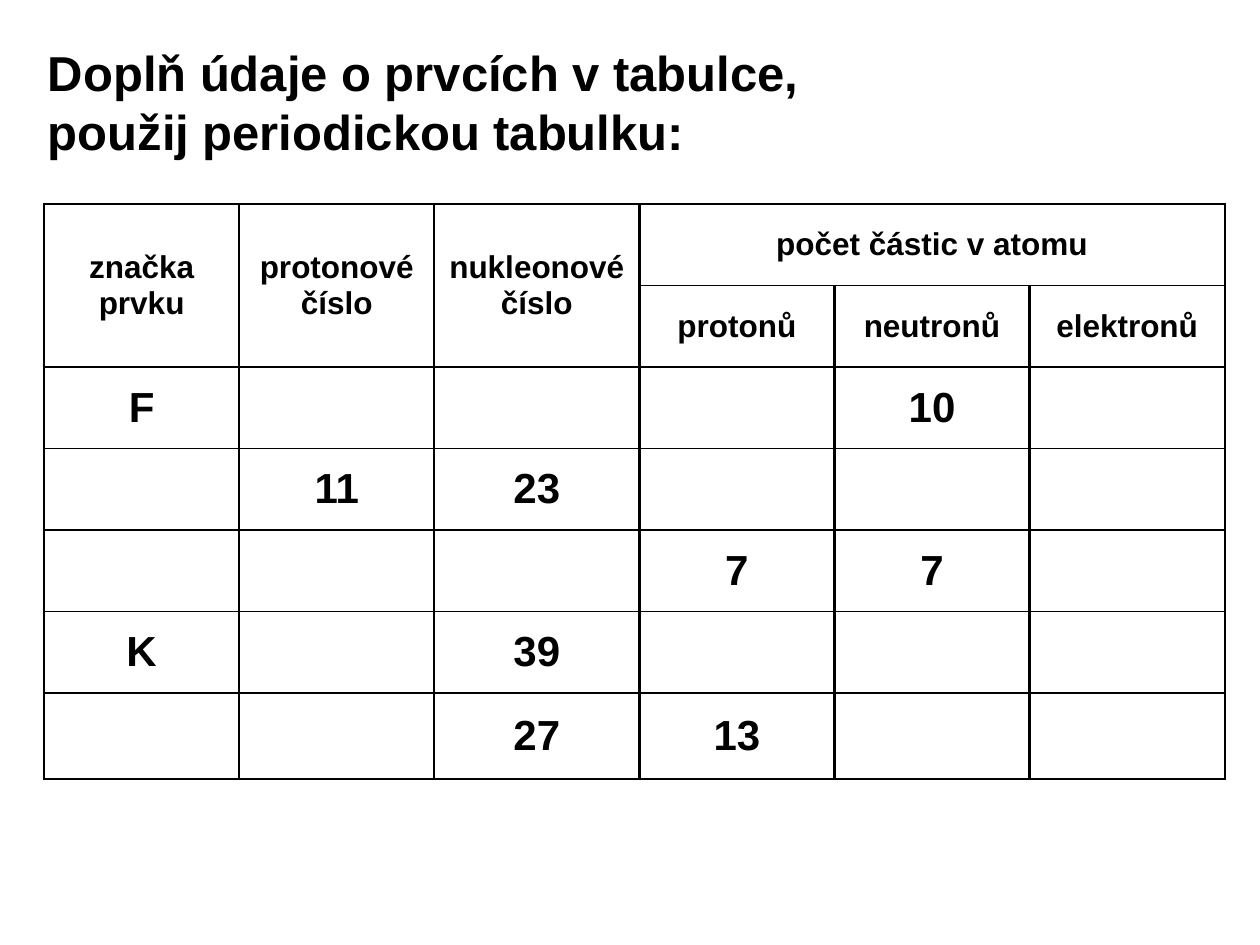
from lxml.etree import SubElement
from pptx import Presentation
from pptx.dml.color import RGBColor
from pptx.enum.text import MSO_ANCHOR as Anchor, MSO_AUTO_SIZE as AutoSize, PP_ALIGN as Align
from pptx.oxml.ns import qn
from pptx.util import Pt

# Content
HEADING = "Doplň údaje o prvcích v tabulce, použij periodickou tabulku:"
HEADER_ROWS = [
    ["značka\nprvku", "protonové číslo", "nukleonové číslo", "počet částic v atomu", "", ""],
    ["", "", "", "protonů", "neutronů", "elektronů"],
]
ELEMENT_ROWS = [
    ["F", "", "", "", "10", ""],
    ["", "11", "23", "", "", ""],
    ["", "", "", "7", "7", ""],
    ["K", "", "39", "", "", ""],
    ["", "", "27", "13", "", ""],
]
MERGES = [((0, col), (1, col)) for col in range(3)] + [((0, 3), (0, 5))]

# Layout in points
HEADING_BOX = dict(left=20.2, top=20.9, width=459.4, height=74.9)
TABLE_LEFT, TABLE_TOP = 25.2, 116.6
COLUMN_WIDTHS = [111.5, 111.5, 117.2, 111.5, 111.5, 111.5]
ROW_HEIGHTS = [46.6] * 6 + [49.2]
CELL_FORMAT = dict(margin_left=Pt(3), margin_right=Pt(3), margin_top=0,
                   margin_bottom=0, vertical_anchor=Anchor.MIDDLE)
BLACK = "000000"
THICK, THIN = 1.5, 1
THIN_LINES = {1, 3, 4, 5, 6}  # horizontal grid lines, counted from the top


def color(hex_value):
    return RGBColor.from_string(hex_value)


def style_text(frame, size, align):
    for paragraph in frame.paragraphs:
        paragraph.alignment = align
        for key, value in dict(name="Arial", size=Pt(size), bold=True).items():
            setattr(paragraph.font, key, value)
        paragraph.font.color.rgb = color(BLACK)
        for run in paragraph.runs:
            run.font.color.rgb = color(BLACK)


def grid_weight(line):
    return THIN if line in THIN_LINES else THICK


def add_borders(cell, weights):
    properties = cell._tc.get_or_add_tcPr()
    for side, weight in weights.items():
        border = SubElement(properties, qn(f"a:ln{side}"), w=str(Pt(weight)))
        fill = SubElement(border, qn("a:solidFill"))
        SubElement(fill, qn("a:srgbClr"), val=BLACK)


def add_heading(slide):
    heading = slide.shapes.title
    for key, value in HEADING_BOX.items():
        setattr(heading, key, Pt(value))
    frame = heading.text_frame
    frame.text = HEADING
    for key, value in dict(word_wrap=True, auto_size=AutoSize.NONE,
                           vertical_anchor=Anchor.TOP).items():
        setattr(frame, key, value)
    style_text(frame, 28, Align.LEFT)


def add_element_table(slide):
    rows = HEADER_ROWS + ELEMENT_ROWS
    table = slide.shapes.add_table(
        len(rows), len(COLUMN_WIDTHS), Pt(TABLE_LEFT), Pt(TABLE_TOP),
        Pt(sum(COLUMN_WIDTHS)), Pt(sum(ROW_HEIGHTS))).table
    table.first_row = table.horz_banding = False
    for column, width in zip(table.columns, COLUMN_WIDTHS):
        column.width = Pt(width)
    for row, height in zip(table.rows, ROW_HEIGHTS):
        row.height = Pt(height)
    for start, end in MERGES:
        table.cell(*start).merge(table.cell(*end))

    for r, texts in enumerate(rows):
        for c, text in enumerate(texts):
            cell = table.cell(r, c)
            cell.text = text
            for key, value in CELL_FORMAT.items():
                setattr(cell, key, value)
            style_text(cell.text_frame, 18 if r < len(HEADER_ROWS) else 24, Align.CENTER)
            bottom = r + (cell.span_height if cell.is_merge_origin else 1)
            add_borders(cell, dict(L=THICK, R=THICK, T=grid_weight(r), B=grid_weight(bottom)))
            cell.fill.background()


def main():
    deck = Presentation()
    deck.slide_width, deck.slide_height = Pt(720), Pt(540)
    slide = deck.slides.add_slide(deck.slide_layouts[5])
    add_heading(slide)
    add_element_table(slide)
    deck.save("out.pptx")


if __name__ == "__main__":
    main()
